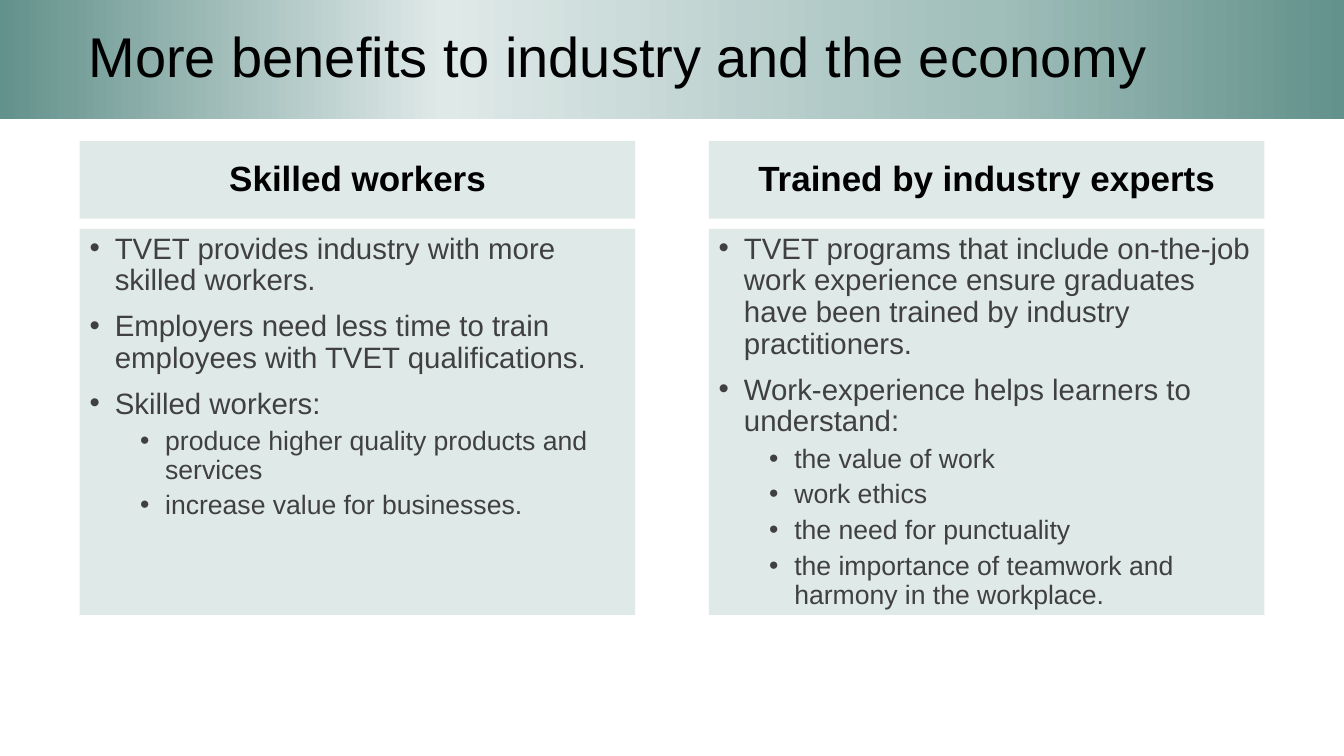
from lxml.etree import SubElement
from pptx import Presentation
from pptx.dml.color import RGBColor
from pptx.enum.shapes import MSO_SHAPE as Shape
from pptx.enum.text import MSO_ANCHOR as Anchor, PP_ALIGN as Align
from pptx.oxml.ns import qn
from pptx.util import Inches, Pt

PALE = "DFE9E8"
BANNER_STOPS = [(0, "63918B"), (33, PALE), (74, "A0BEBA"), (100, "63918B")]
MARGIN, COLUMN_STEP, COLUMN_TOP = 0.79, 6.24, 1.4
COLUMN_WIDTH, HEADING_HEIGHT, BODY_OFFSET, BODY_HEIGHT = 5.51, 0.77, 0.87, 3.83

# Each column: heading, then (level, text) points
COLUMNS = [
    ("Skilled workers", [
        (0, "TVET provides industry with more skilled workers."),
        (0, "Employers need less time to train employees with TVET qualifications."),
        (0, "Skilled workers:"),
        (1, "produce higher quality products and services"),
        (1, "increase value for businesses."),
    ]),
    ("Trained by industry experts", [
        (0, "TVET programs that include on-the-job work experience ensure "
            "graduates have been trained by industry practitioners."),
        (0, "Work-experience helps learners to understand:"),
        (1, "the value of work"),
        (1, "work ethics"),
        (1, "the need for punctuality"),
        (1, "the importance of teamwork and harmony in the workplace."),
    ]),
]


def rgb(color):
    return RGBColor.from_string(color)


def add_panel(slide, left, top, width, height, anchor=Anchor.MIDDLE):
    """Add a pale borderless rectangle that wraps its text."""
    panel = slide.shapes.add_shape(Shape.RECTANGLE, Inches(left), Inches(top),
                                   Inches(width), Inches(height))
    panel.shadow.inherit = False
    panel.fill.solid()
    panel.fill.fore_color.rgb = rgb(PALE)
    panel.line.fill.background()
    panel.text_frame.word_wrap = True
    panel.text_frame.vertical_anchor = anchor
    return panel


def write(paragraph, text, size, color="000000", bold=False, align=Align.LEFT,
          margin=0, bullet=None, before=0):
    """Fill a paragraph; margin is in inches, a bullet hangs 0.25 inch."""
    props = paragraph._p.get_or_add_pPr()
    props.set("marL", str(Inches(margin)))
    props.set("indent", str(Inches(-0.25 if bullet else 0)))
    if bullet:
        SubElement(props, qn("a:buFont"), typeface="Arial")
        SubElement(props, qn("a:buChar"), char=bullet)
    paragraph.alignment = align
    paragraph.line_spacing = 0.9
    paragraph.space_before = Pt(before)
    run = paragraph.add_run()
    run.text = text
    run.font.name = "Arial"
    run.font.size = Pt(size)
    run.font.bold = bold
    run.font.color.rgb = rgb(color)


def fill_gradient(shape, stops):
    """Give the shape a left-to-right gradient of (percent, colour) stops."""
    shape.fill.gradient()
    shape.fill.gradient_angle = 0
    stop_list = shape._element.spPr.find(qn("a:gradFill")).find(qn("a:gsLst"))
    for stop in list(stop_list):
        stop_list.remove(stop)
    for percent, color in stops:
        stop = SubElement(stop_list, qn("a:gs"), pos=str(percent * 1000))
        SubElement(stop, qn("a:srgbClr"), val=color)


def add_banner(slide, left, top, width, height):
    banner = add_panel(slide, left, top, width, height)
    fill_gradient(banner, BANNER_STOPS)
    write(banner.text_frame.paragraphs[0],
          "More benefits to industry and the economy", 40, margin=0.78)


def add_column(slide, left, top, width, heading, points):
    heading_panel = add_panel(slide, left, top, width, HEADING_HEIGHT)
    write(heading_panel.text_frame.paragraphs[0], heading, 25, bold=True,
          align=Align.CENTER)
    body = add_panel(slide, left, top + BODY_OFFSET, width, BODY_HEIGHT,
                     Anchor.TOP).text_frame
    for index, (level, text) in enumerate(points):
        paragraph = body.add_paragraph() if index else body.paragraphs[0]
        paragraph.level = level
        before = (5 if level else 10) if index else 0
        write(paragraph, text, 19 if level else 21, "404040",
              margin=0.25 + 0.5 * level, bullet="•", before=before)


def main():
    deck = Presentation()
    deck.slide_width, deck.slide_height = Inches(13.33), Inches(7.5)
    slide = deck.slides.add_slide(deck.slide_layouts[6])
    add_banner(slide, 0, 0, 13.33, 1.18)
    for index, (heading, points) in enumerate(COLUMNS):
        add_column(slide, MARGIN + index * COLUMN_STEP, COLUMN_TOP,
                   COLUMN_WIDTH, heading, points)
    deck.save("out.pptx")


if __name__ == "__main__":
    main()
